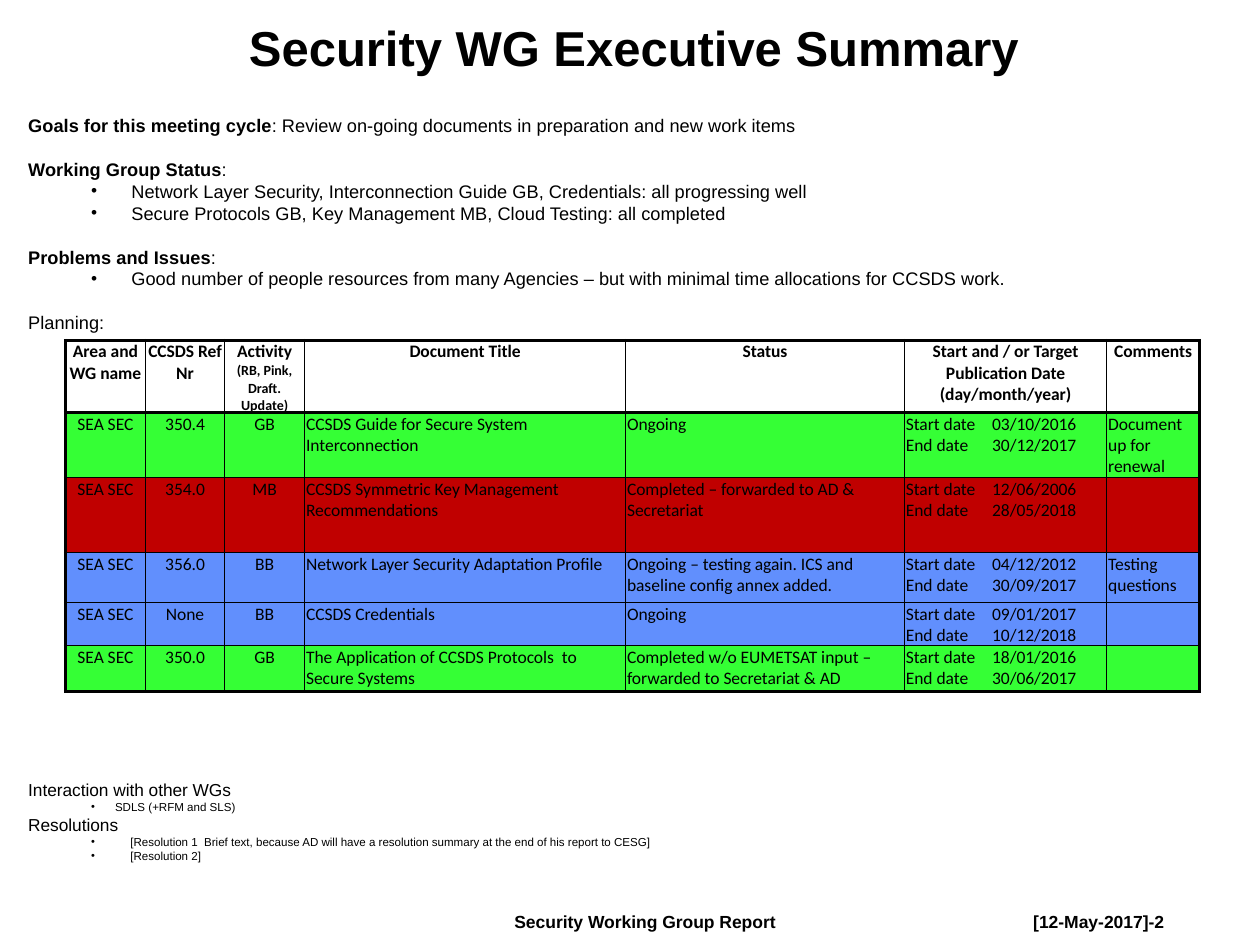
from lxml.etree import SubElement
from pptx import Presentation
from pptx.dml.color import RGBColor
from pptx.enum.text import MSO_ANCHOR, MSO_AUTO_SIZE, PP_ALIGN
from pptx.oxml.ns import qn
from pptx.util import Cm, Pt

# Content
TITLE = "Security WG Executive Summary"
FOOTERS = [  # text, left, width
    ("Security Working Group Report", 10.14, 5.92),
    ("[12-May-2017]-2", 20.6, 3.35),
]
# bold lead, plain text, size, space before in points, bullet (margin, hanging)
WIDE, NARROW, LOWER = (2.08, 0.81), (1.75, 0.48), (2.06, 0.79)
BLANK_LINE, TABLE_GAP = 12.57, 255
SUMMARY = [
    ("Goals for this meeting cycle",
     ": Review on-going documents in preparation and new work items", 10.4, 0, None),
    ("Working Group Status", ":", 10.4, BLANK_LINE, None),
    ("", "Network Layer Security, Interconnection Guide GB, Credentials: "
         "all progressing well", 10.4, 0, WIDE),
    ("", "Secure Protocols GB, Key Management MB, Cloud Testing: all completed",
     10.4, 0, WIDE),
    ("Problems and Issues", ":", 10.4, BLANK_LINE, None),
    ("", "Good number of people resources from many Agencies – but with minimal "
         "time allocations for CCSDS work.", 10.4, 0, WIDE),
    ("", "Planning:", 10.4, BLANK_LINE, None),
    ("", "Interaction with other WGs", 9.9, TABLE_GAP, None),
    ("", "SDLS (+RFM and SLS)", 6.6, 0, NARROW),
    ("", "Resolutions", 9.9, 0, None),
    ("", "[Resolution 1  Brief text, because AD will have a resolution summary "
         "at the end of his report to CESG]", 6.6, 0, LOWER),
    ("", "[Resolution 2]", 6.6, 0, LOWER),
]
HEADINGS = ["Area and WG name", "CCSDS Ref Nr", "Activity\v(RB, Pink, Draft. Update)",
            "Document Title", "Status",
            "Start and / or Target Publication Date (day/month/year)", "Comments"]
GREEN, RED, BLUE, BLACK = "35FF35", "C00000", "618FFD", "000000"
# colour, row height, ref, activity, title, status, start, end, comments
DOCUMENTS = [
    (GREEN, 1.31, "350.4", "GB", "CCSDS Guide for Secure System Interconnection",
     "Ongoing", "03/10/2016", "30/12/2017", "Document up for renewal"),
    (RED, 1.51, "354.0", "MB", "CCSDS Symmetric Key Management Recommendations",
     "Completed – forwarded to AD & Secretariat", "12/06/2006", "28/05/2018", ""),
    (BLUE, 1.01, "356.0", "BB", "Network Layer Security Adaptation Profile",
     "Ongoing – testing again. ICS and baseline config annex added.",
     "04/12/2012", "30/09/2017", "Testing questions"),
    (BLUE, 0.86, "None", "BB", "CCSDS Credentials",
     "Ongoing", "09/01/2017", "10/12/2018", ""),
    (GREEN, 0.92, "350.0", "GB", "The Application of CCSDS Protocols  to Secure Systems",
     "Completed w/o EUMETSAT input – forwarded to Secretariat & AD",
     "18/01/2016", "30/06/2017", ""),
]
HEADING_HEIGHT = 1.44
COLUMN_WIDTHS = [1.61, 1.6, 1.61, 6.47, 5.62, 4.08, 1.87]
CENTRED_COLUMNS, DATE_COLUMN, DATE_TAB = 3, 5, 1.74


def rgb(colour):
    return RGBColor.from_string(colour)


def style(font, size, bold=False, name="Arial"):
    font.name, font.size, font.bold = name, Pt(size), bold
    font.color.rgb = rgb(BLACK)


def set_margins(frame, horizontal, vertical):
    frame.margin_left = frame.margin_right = Cm(horizontal)
    frame.margin_top = frame.margin_bottom = Cm(vertical)


def set_indent(paragraph, margin, first=0):
    properties = paragraph._p.get_or_add_pPr()
    properties.set("marL", str(Cm(margin)))
    properties.set("indent", str(Cm(first)))
    return properties


def add_bullet(paragraph, margin, hanging):
    properties = set_indent(paragraph, margin, -hanging)
    colour = SubElement(properties, qn("a:buClr"))
    SubElement(colour, qn("a:srgbClr"), val=BLACK)
    SubElement(properties, qn("a:buSzPct"), val="95000")
    SubElement(properties, qn("a:buFont"), typeface="Arial")
    SubElement(properties, qn("a:buChar"), char="•")


def add_tab(paragraph, position):
    tabs = SubElement(paragraph._p.get_or_add_pPr(), qn("a:tabLst"))
    SubElement(tabs, qn("a:tab"), pos=str(Cm(position)), algn="l")


def add_borders(cell, widths):
    properties = cell._tc.get_or_add_tcPr()
    for side, width in zip("LRTB", widths):
        line = SubElement(properties, qn(f"a:ln{side}"), w=str(Pt(width)))
        fill = SubElement(line, qn("a:solidFill"))
        SubElement(fill, qn("a:srgbClr"), val=BLACK)


def add_panel(left, top, width, height):
    right, bottom = Cm(left + width), Cm(top + height)
    outline = slide.shapes.build_freeform(Cm(left), Cm(top))
    outline.add_line_segments([(right, Cm(top)), (right, bottom), (Cm(left), bottom)])
    panel = outline.convert_to_shape()
    panel.shadow.inherit = False
    panel.fill.background()
    panel.line.fill.background()
    return panel


presentation = Presentation()
presentation.slide_width, presentation.slide_height = Cm(25.4), Cm(19.05)
slide = presentation.slides.add_slide(presentation.slide_layouts[5])

# Title
title = slide.shapes.title
title.left, title.top, title.width, title.height = Cm(2.46), Cm(0.34), Cm(19.63), Cm(1.47)
heading = title.text_frame
heading.text = TITLE
heading.auto_size, heading.vertical_anchor = MSO_AUTO_SIZE.NONE, MSO_ANCHOR.TOP
set_margins(heading, 0.15, 0.15)
heading_line = heading.paragraphs[0]
heading_line.alignment, heading_line.line_spacing = PP_ALIGN.CENTER, 0.9
set_indent(heading_line, 1)
style(heading_line.runs[0].font, 28, True)

# Footers
for text, left, width in FOOTERS:
    footer = slide.shapes.add_textbox(Cm(left), Cm(18.27), Cm(width), Cm(0.66)).text_frame
    footer.word_wrap = False
    set_margins(footer, 0.23, 0.1)
    footer.text = text
    style(footer.paragraphs[0].runs[0].font, 10, True)

# Summary
summary = add_panel(0.42, 2.16, 24.64, 15.67).text_frame
summary.word_wrap, summary.vertical_anchor = True, MSO_ANCHOR.TOP
set_margins(summary, 0.15, 0.15)
for index, (lead, text, size, gap, bullet) in enumerate(SUMMARY):
    paragraph = summary.add_paragraph() if index else summary.paragraphs[0]
    paragraph.alignment, paragraph.space_before = PP_ALIGN.LEFT, Pt(gap)
    if bullet:
        add_bullet(paragraph, *bullet)
    for part, bold in ((lead, True), (text, False)):
        if part:
            run = paragraph.add_run()
            run.text = part
            style(run.font, size, bold)

# Planning table
rows = [HEADINGS] + [
    ["SEA SEC", ref, activity, name, status,
     f"Start date\t{start}\vEnd date\t{end}", comments]
    for _, _, ref, activity, name, status, start, end, comments in DOCUMENTS]
fills = [None] + [document[0] for document in DOCUMENTS]
heights = [HEADING_HEIGHT] + [document[1] for document in DOCUMENTS]
last_row, last_column = len(rows) - 1, len(COLUMN_WIDTHS) - 1
planning = slide.shapes.add_table(
    len(rows), len(COLUMN_WIDTHS), Cm(1.32), Cm(6.86),
    Cm(sum(COLUMN_WIDTHS)), Cm(sum(heights))).table
planning.first_row = planning.horz_banding = False
for column, width in zip(planning.columns, COLUMN_WIDTHS):
    column.width = Cm(width)
for r, (texts, fill, height) in enumerate(zip(rows, fills, heights)):
    planning.rows[r].height = Cm(height)
    for c, text in enumerate(texts):
        cell = planning.cell(r, c)
        set_margins(cell, 0.03, 0.02)
        cell.margin_bottom = 0
        thick = (c == 0, c == last_column, r <= 1, r in (0, last_row))
        add_borders(cell, [2 if side else 0.5 for side in thick])
        if fill:
            cell.fill.solid()
            cell.fill.fore_color.rgb = rgb(fill)
        else:
            cell.fill.background()
        cell.text_frame.text = text
        paragraph = cell.text_frame.paragraphs[0]
        if r == 0 or c < CENTRED_COLUMNS:
            paragraph.alignment = PP_ALIGN.CENTER
        elif c == DATE_COLUMN:
            add_tab(paragraph, DATE_TAB)
        for position, run in enumerate(paragraph.runs):
            small = r == 0 and position > 0
            style(run.font, 8 if small else 10, r == 0, "Calibri")

presentation.save("out.pptx")
